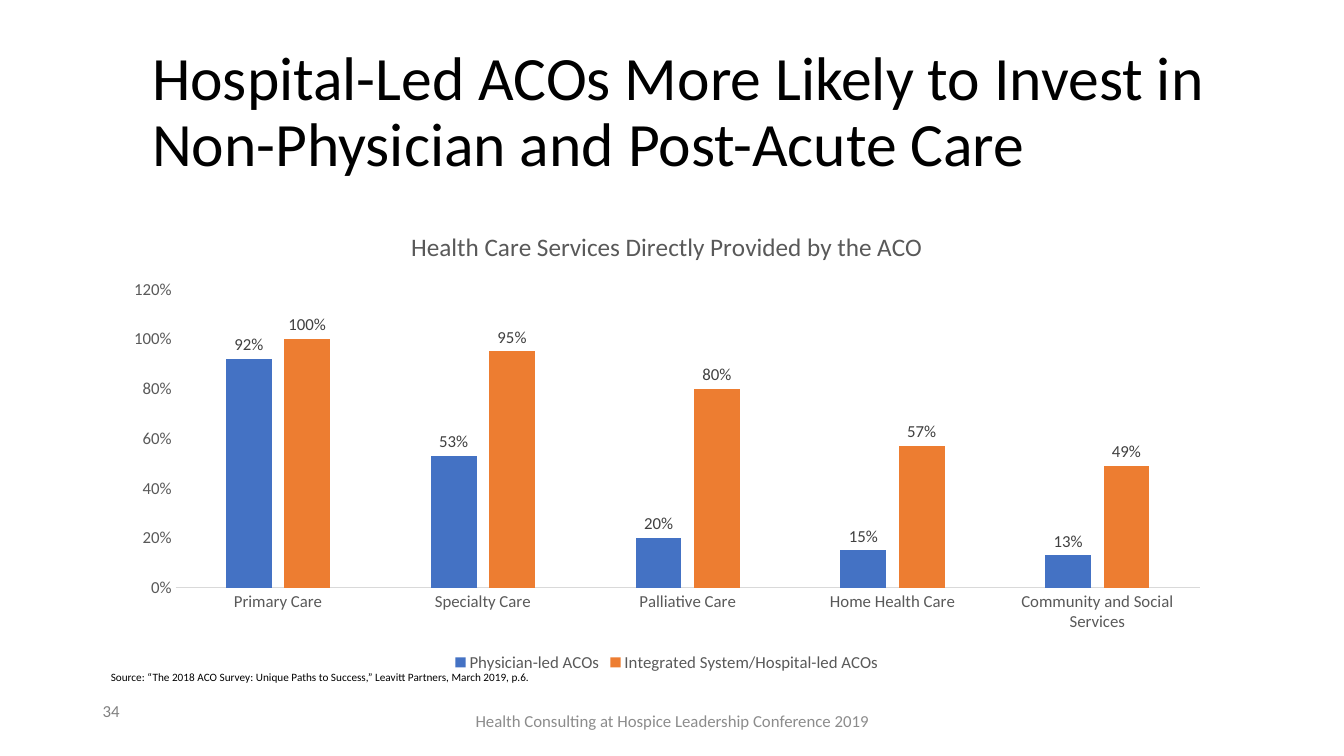
from pptx import Presentation
from pptx.chart import data
from pptx.dml import color
from pptx.enum import chart as kinds, text
from pptx.util import Inches, Pt

FONT = "Calibri"
COLORS = {
    "black": "000000",
    "physician": "4472C4",
    "hospital": "ED7D31",
    "axis_text": "595959",
    "axis_line": "D9D9D9",
    "label": "404040",
    "footer": "8C8C8C",
    "number": "808080",
}
SERVICES = ["Primary Care", "Specialty Care", "Palliative Care",
            "Home Health Care", "Community and Social Services"]
SERIES = [
    ("Physician-led ACOs", [0.92, 0.53, 0.2, 0.15, 0.13], "physician"),
    ("Integrated System/Hospital-led ACOs", [1, 0.95, 0.8, 0.57, 0.49], "hospital"),
]


def rgb(name):
    return color.RGBColor.from_string(COLORS[name])


def style_font(font, size, name):
    font.name = FONT
    font.size = Pt(size)
    font.bold = False
    font.color.rgb = rgb(name)


def add_text(page, words, left, top, width, height, size=12, fill="black",
             anchor=text.MSO_ANCHOR.TOP, align=text.PP_ALIGN.LEFT, spacing=1.0):
    box = page.shapes.add_textbox(Inches(left), Inches(top), Inches(width), Inches(height))
    frame = box.text_frame
    frame.word_wrap = True
    frame.vertical_anchor = anchor
    para = frame.paragraphs[0]
    para.alignment = align
    para.line_spacing = spacing
    span = para.add_run()
    span.text = words
    style_font(span.font, size, fill)


def style_axes(chart):
    for axis in (chart.category_axis, chart.value_axis):
        axis.has_major_gridlines = False
        axis.major_tick_mark = kinds.XL_TICK_MARK.NONE
        axis.minor_tick_mark = kinds.XL_TICK_MARK.NONE
        style_font(axis.tick_labels.font, 12, "axis_text")
    line = chart.category_axis.format.line
    line.color.rgb = rgb("axis_line")
    line.width = Pt(0.75)
    values = chart.value_axis
    values.format.line.fill.background()
    values.minimum_scale = 0
    values.maximum_scale = 1.2
    values.major_unit = 0.2
    values.tick_labels.number_format = "0%"
    values.tick_labels.number_format_is_linked = False


def style_series(series, fill):
    series.format.fill.solid()
    series.format.fill.fore_color.rgb = rgb(fill)
    series.invert_if_negative = False
    labels = series.data_labels
    labels.show_value = True
    labels.number_format = "0%"
    labels.number_format_is_linked = False
    labels.position = kinds.XL_LABEL_POSITION.OUTSIDE_END
    style_font(labels.font, 12, "label")


def add_services_chart(page, left, top, width, height):
    table = data.CategoryChartData(number_format="0%")
    table.categories = SERVICES
    for name, values, _ in SERIES:
        table.add_series(name, values)
    chart = page.shapes.add_chart(
        kinds.XL_CHART_TYPE.COLUMN_CLUSTERED, Inches(left), Inches(top),
        Inches(width), Inches(height), table).chart
    style_font(chart.font, 10, "black")
    chart.has_title = True
    frame = chart.chart_title.text_frame
    frame.text = "Health Care Services Directly Provided by the ACO"
    style_font(frame.paragraphs[0].runs[0].font, 18, "axis_text")
    chart.chart_title.include_in_layout = False
    chart.has_legend = True
    chart.legend.position = kinds.XL_LEGEND_POSITION.BOTTOM
    chart.legend.include_in_layout = False
    style_font(chart.legend.font, 12, "axis_text")
    style_axes(chart)
    plot = chart.plots[0]
    plot.gap_width = 219
    plot.overlap = -27
    plot.vary_by_categories = False
    for series, (_, _, fill) in zip(plot.series, SERIES):
        style_series(series, fill)


def main():
    deck = Presentation()
    deck.slide_width = Inches(13.33)
    deck.slide_height = Inches(7.5)
    page = deck.slides.add_slide(deck.slide_layouts[6])
    add_text(page, "Hospital-Led ACOs More Likely to Invest in Non-Physician and Post-Acute Care",
             1.41, 0.4, 11.01, 1.45, size=44, anchor=text.MSO_ANCHOR.MIDDLE, spacing=0.9)
    add_services_chart(page, 1.11, 2.08, 11.01, 4.63)
    add_text(page, "Health Consulting at Hospice Leadership Conference 2019",
             4.42, 6.95, 4.5, 0.4, fill="footer",
             anchor=text.MSO_ANCHOR.MIDDLE, align=text.PP_ALIGN.CENTER)
    add_text(page, "34", 0.92, 6.9, 3, 0.4, fill="number")
    add_text(page, "Source: “The 2018 ACO Survey: Unique Paths to Success,” "
             "Leavitt Partners, March 2019, p.6.", 1, 6.6, 8.72, 0.24, size=8)
    deck.save("out.pptx")


if __name__ == "__main__":
    main()
